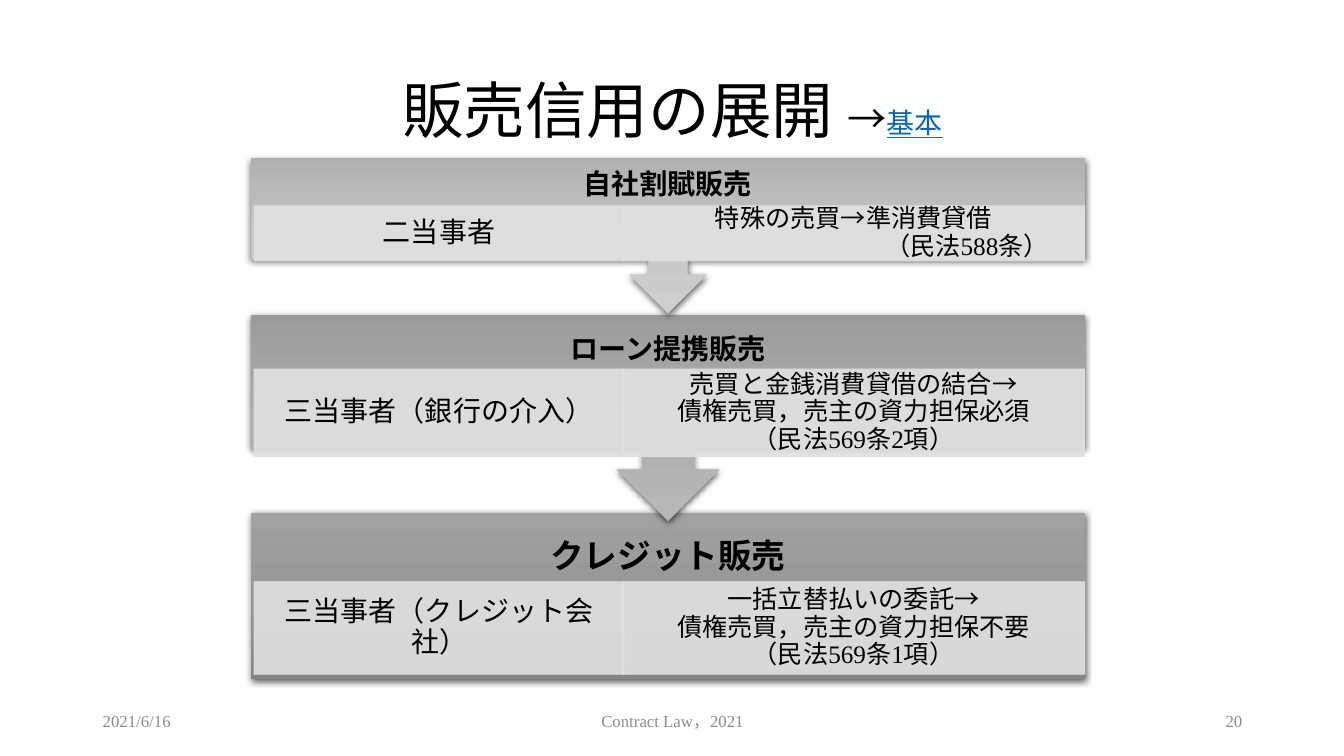
import dataclasses

import lxml.etree
import pptx
import pptx.dml.color
import pptx.enum.shapes
import pptx.enum.text
import pptx.oxml.ns
import pptx.util

Inches = pptx.util.Inches
Pt = pptx.util.Pt
qn = pptx.oxml.ns.qn
Align = pptx.enum.text.PP_ALIGN
Preset = pptx.enum.shapes.MSO_SHAPE


@dataclasses.dataclass(frozen=True)
class Theme:
    sans: str = "Noto Sans CJK JP"
    serif: str = "Times New Roman"
    ink: str = "000000"
    link: str = "0563C1"
    muted: str = "8C8C8C"
    cell: str = "E1E1E1"
    cell_alpha: int = 90
    shadow_alpha: int = 63
    title_size: int = 44
    arrow_size: int = 28
    link_size: int = 20
    header_size: int = 20
    final_header_size: int = 24
    party_size: int = 20
    detail_size: int = 18
    footer_size: int = 12


@dataclasses.dataclass(frozen=True)
class Stage:
    name: str
    parties: str
    details: tuple
    top: float
    height: float
    header_height: float
    cell_top: float
    cell_height: float
    gradient: tuple
    final: bool = False


THEME = Theme()
PANEL_LEFT, PANEL_WIDTH = 2.49, 8.27
PARTY_LEFT, PARTY_WIDTH = 2.52, 3.67
DETAIL_LEFT, DETAIL_WIDTH = 6.17, 4.59
CITATION_INDENT = 2.25

STAGES = (
    Stage("自社割賦販売", "二当事者", ("特殊の売買→準消費貸借", "（民法588条）"),
          1.57, 1.54, 0.54, 2.04, 0.55, ("CECECE", "C6C6C6", "B0B0B0")),
    Stage("ローン提携販売", "三当事者（銀行の介入）",
          ("売買と金銭消費貸借の結合→", "債権売買，売主の資力担保必須", "（民法569条2項）"),
          3.12, 2.05, 0.72, 3.66, 0.87, ("B7B7B7", "AEAEAE", "9B9B9B")),
    Stage("クレジット販売", "三当事者（クレジット会社）",
          ("一括立替払いの委託→", "債権売買，売主の資力担保不要", "（民法569条1項）"),
          5.09, 1.65, 0.89, 5.77, 0.92, ("A1A1A1", "969696", "858585"), True),
)


def rgb(value):
    return pptx.dml.color.RGBColor.from_string(value)


def format_run(run, size, color=THEME.ink, font=THEME.serif, bold=False, underline=False):
    run.font.size = Pt(size)
    run.font.name = font
    run.font.bold = bold
    run.font.underline = underline
    run.font.color.rgb = rgb(color)
    east_asian = lxml.etree.SubElement(run.font._element, qn("a:ea"))
    east_asian.set("typeface", THEME.sans)


def write_text(shape, lines, size, align=Align.CENTER, insets=(0.1, 0.05), line_spacing=0.9, **style):
    frame = shape.text_frame
    frame.word_wrap = True
    frame.vertical_anchor = pptx.enum.text.MSO_ANCHOR.MIDDLE
    frame.margin_left = frame.margin_right = Inches(insets[0])
    frame.margin_top = frame.margin_bottom = Inches(insets[1])
    frame.text = "\n".join(lines)
    for paragraph in frame.paragraphs:
        paragraph.alignment = align
        paragraph.line_spacing = line_spacing
        paragraph.space_before = paragraph.space_after = Pt(0)
        for run in paragraph.runs:
            format_run(run, size, **style)


def add_text(slide, box, lines, size, **options):
    shape = slide.shapes.add_textbox(*map(Inches, box))
    write_text(shape, lines, size, **options)


def add_panel(slide, stage):
    preset = Preset.RECTANGLE if stage.final else Preset.UP_ARROW_CALLOUT
    shape = slide.shapes.add_shape(
        preset, *map(Inches, (PANEL_LEFT, stage.top, PANEL_WIDTH, stage.height)))
    shape.rotation = 0 if stage.final else 180
    shape.line.fill.background()
    shape.fill.gradient()
    shape.fill.gradient_angle = 270
    properties = shape._element.spPr
    stops = properties.find(".//" + qn("a:gsLst"))
    for stop in list(stops):
        stops.remove(stop)
    for index, color in enumerate(stage.gradient):
        stop = lxml.etree.SubElement(stops, qn("a:gs"), pos=str(index * 50000))
        lxml.etree.SubElement(stop, qn("a:srgbClr"), val=color)
    shape.shadow.inherit = False
    shadow = lxml.etree.SubElement(
        properties.find(qn("a:effectLst")), qn("a:outerShdw"),
        blurRad=str(Pt(4.5)), dist=str(Pt(1.5)), dir="5400000", algn="ctr", rotWithShape="0")
    color = lxml.etree.SubElement(shadow, qn("a:srgbClr"), val=THEME.ink)
    lxml.etree.SubElement(color, qn("a:alpha"), val=str(THEME.shadow_alpha * 1000))


def add_cell(slide, box, lines, size, insets):
    shape = slide.shapes.add_shape(Preset.RECTANGLE, *map(Inches, box))
    shape.shadow.inherit = False
    shape.fill.solid()
    shape.fill.fore_color.rgb = rgb(THEME.cell)
    shape.line.color.rgb = rgb(THEME.cell)
    shape.line.width = Pt(0.5)
    for color in shape._element.spPr.findall(".//" + qn("a:srgbClr")):
        lxml.etree.SubElement(color, qn("a:alpha"), val=str(THEME.cell_alpha * 1000))
    write_text(shape, lines, size, insets=insets)
    return shape


def add_stage(slide, stage):
    add_panel(slide, stage)
    size = THEME.final_header_size if stage.final else THEME.header_size
    inset = 0.19 if stage.final else 0.16
    add_text(slide, (PANEL_LEFT, stage.top, PANEL_WIDTH, stage.header_height),
             [stage.name], size, insets=(inset, inset), bold=True)
    add_cell(slide, (PARTY_LEFT, stage.cell_top, PARTY_WIDTH, stage.cell_height),
             [stage.parties], THEME.party_size, (0.16, 0.03))
    detail = add_cell(slide, (DETAIL_LEFT, stage.cell_top, DETAIL_WIDTH, stage.cell_height),
                      stage.details, THEME.detail_size, (0.14, 0.03))
    if len(stage.details) == 2:
        citation = detail.text_frame.paragraphs[-1]
        citation._p.get_or_add_pPr().set("marL", str(Inches(CITATION_INDENT)))


def set_title(slide):
    title = slide.shapes.title
    title.left, title.top, title.width, title.height = map(Inches, (0.92, 0.4, 11.5, 1.45))
    write_text(title, ["販売信用の展開 "], THEME.title_size, font=THEME.sans)
    paragraph = title.text_frame.paragraphs[0]
    for text, size, color, underline in (
            ("→", THEME.arrow_size, THEME.ink, False),
            ("基本", THEME.link_size, THEME.link, True)):
        run = paragraph.add_run()
        run.text = text
        format_run(run, size, color, THEME.sans, underline=underline)


def add_footer(slide):
    for text, left, width, align in (
            ("2021/6/16", 0.92, 3, Align.LEFT),
            ("Contract Law，2021", 4.42, 4.5, Align.CENTER),
            ("20", 9.42, 3, Align.RIGHT)):
        add_text(slide, (left, 6.95, width, 0.4), [text], THEME.footer_size,
                 align=align, line_spacing=1.0, color=THEME.muted)


def main():
    presentation = pptx.Presentation()
    presentation.slide_width = Inches(13.33)
    presentation.slide_height = Inches(7.5)
    slide = presentation.slides.add_slide(presentation.slide_layouts.get_by_name("Title Only"))
    set_title(slide)
    add_footer(slide)
    for stage in reversed(STAGES):
        add_stage(slide, stage)
    presentation.save("out.pptx")


if __name__ == "__main__":
    main()
